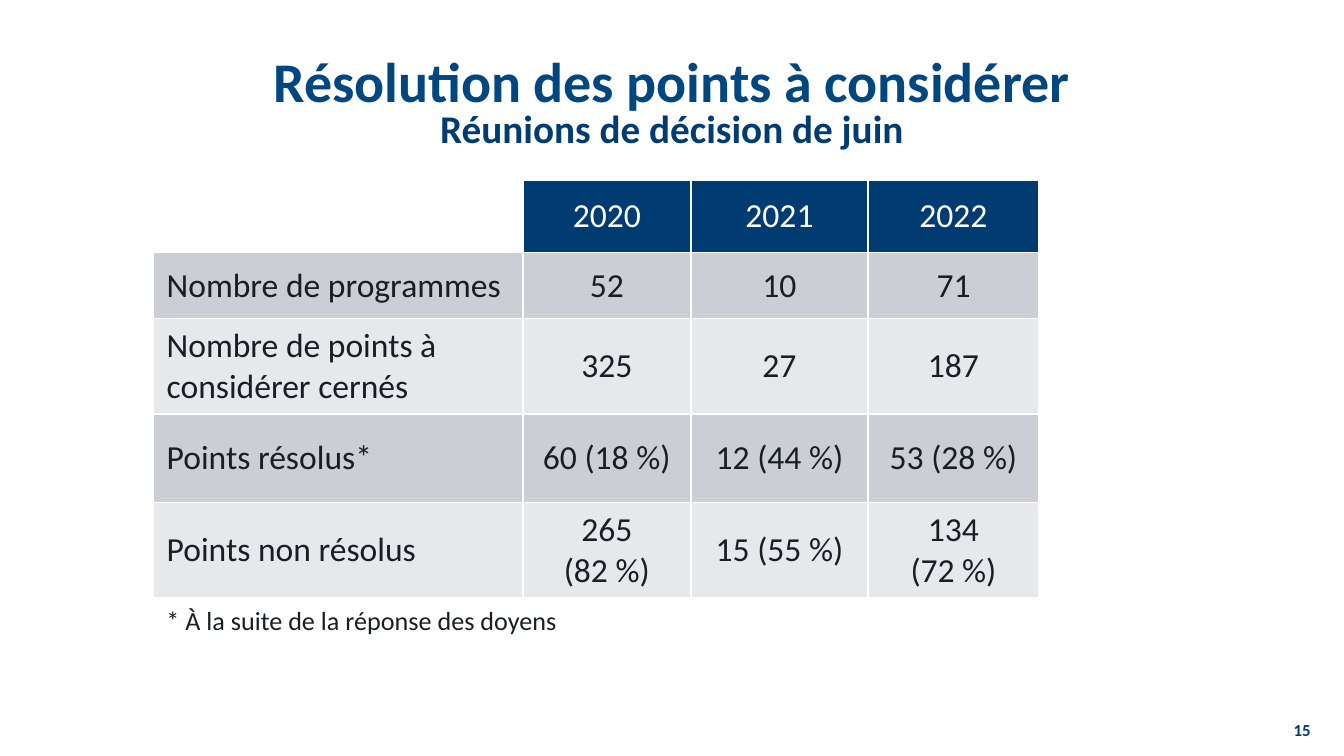
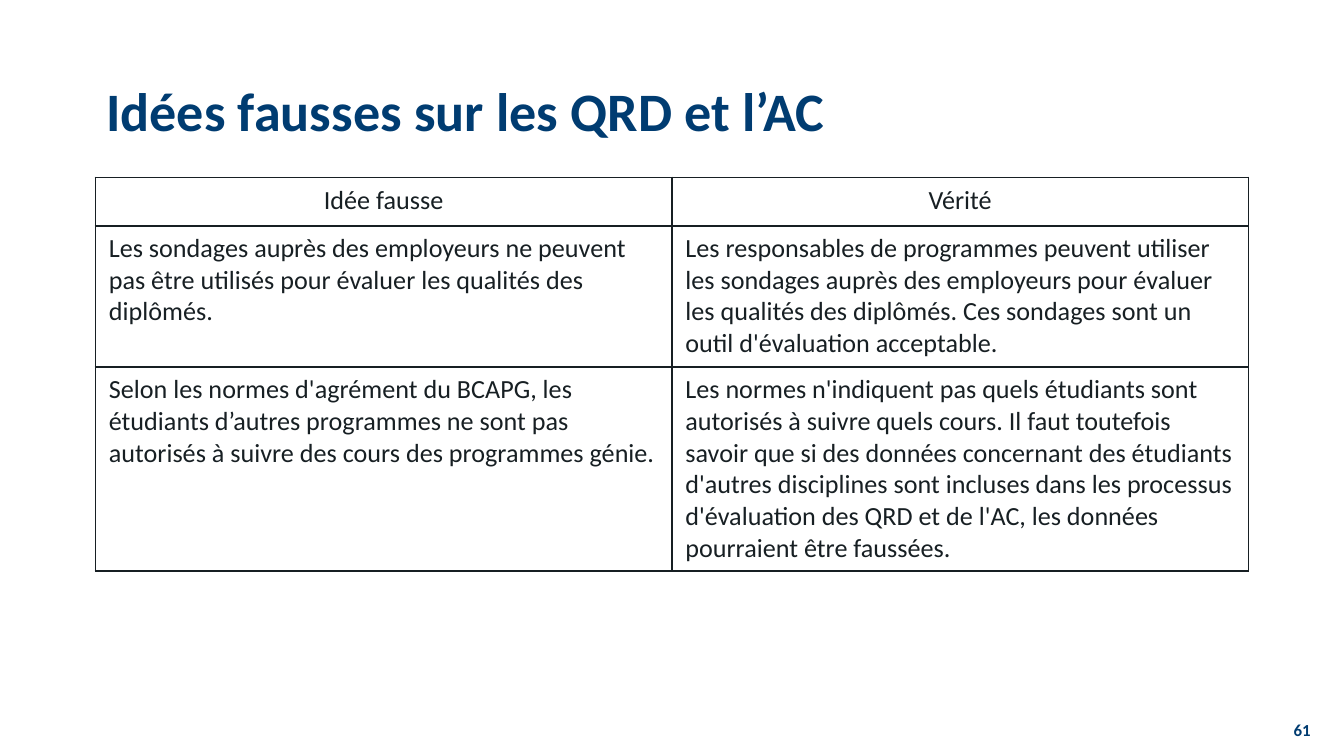
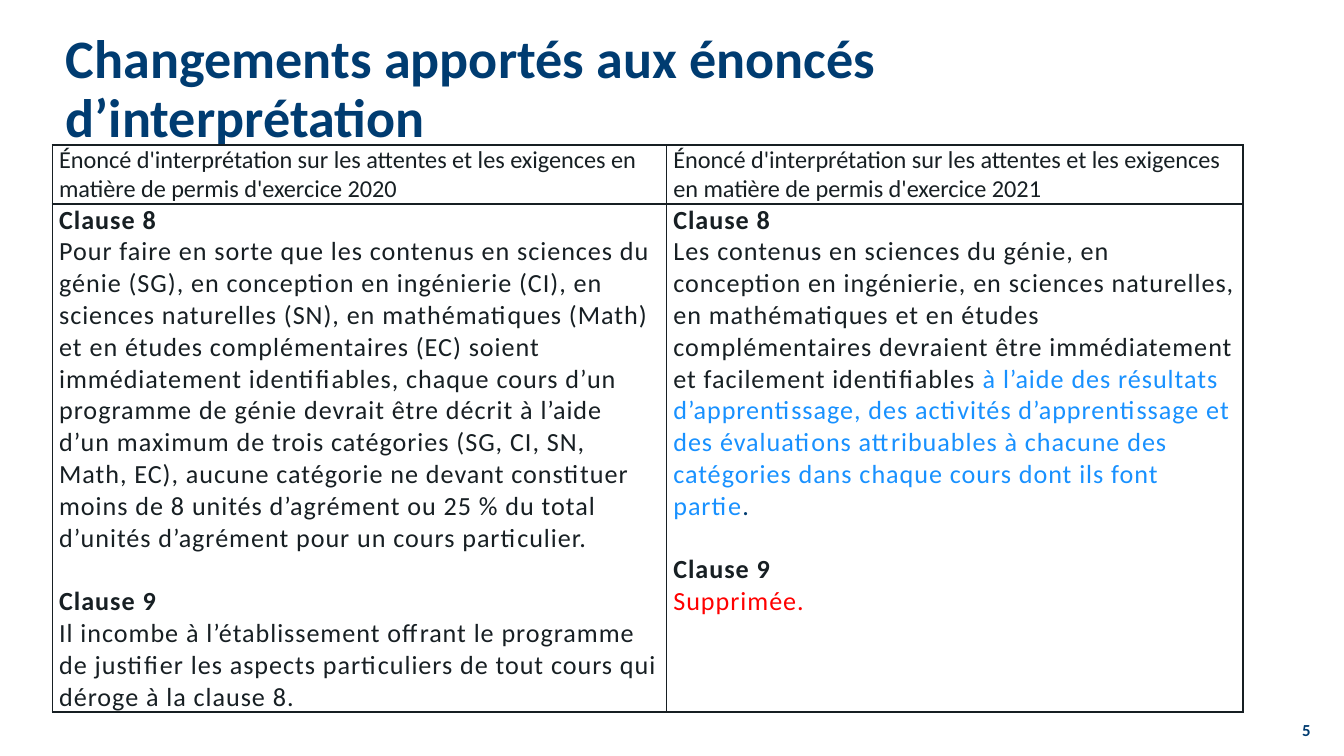
from lxml import etree
from pptx import Presentation
from pptx.dml.color import RGBColor
from pptx.enum.text import MSO_ANCHOR, MSO_AUTO_SIZE, PP_ALIGN
from pptx.oxml.ns import qn
from pptx.util import Inches, Pt

LEFT, MID, RIGHT = PP_ALIGN.LEFT, PP_ALIGN.CENTER, PP_ALIGN.RIGHT
TOP, CENTRE = MSO_ANCHOR.TOP, MSO_ANCHOR.MIDDLE
FIXED = MSO_AUTO_SIZE.NONE

# Shared style
FONT = "Calibri"
NAVY, BLUE, INK, WHITE = "003C71", "00467F", "171F23", "FFFFFF"
DARK, PALE, SKY, RED = "CCCED5", "E7E8EB", "1891FF", "FF0000"
NBSP = chr(160)
TITLE_ONLY = 5


def hue(code):
    return RGBColor.from_string(code)


def cells(count):
    """Length of a number of grid cells; the slide is 100 cells wide."""
    return Inches(count / 10)


def share(count, rate):
    return f"{count} ({rate}{NBSP}%)"


class Deck:
    def __init__(self):
        self.prs = Presentation()
        self.prs.slide_width, self.prs.slide_height = cells(100), cells(56.25)
        self.slide = None

    def page(self, number):
        layout = self.prs.slide_layouts[TITLE_ONLY]
        self.slide = self.prs.slides.add_slide(layout)
        self.label((94.9, 53.5, 3.6, 1.6), str(number), 9, NAVY,
                   bold=True, align=RIGHT, anchor=CENTRE)

    def run(self, para, text, size, color=INK, bold=False, spread=0):
        run = para.add_run()
        run.text = text
        font = run.font
        font.name, font.size, font.bold = FONT, Pt(size), bold
        font.color.rgb = hue(color)
        if spread:
            run._r.get_or_add_rPr().set("spc", str(spread))

    def title(self, box, *lines, align=LEFT, pitch=0.9):
        """Each line is (text, size, colour)."""
        shape = self.slide.shapes.title
        shape.left, shape.top, shape.width, shape.height = map(cells, box)
        frame = shape.text_frame
        frame.auto_size, frame.word_wrap = FIXED, True
        frame.vertical_anchor = CENTRE
        for i, (text, size, color) in enumerate(lines):
            para = frame.add_paragraph() if i else frame.paragraphs[0]
            para.alignment, para.line_spacing = align, pitch
            para.space_before = Pt(0)
            self.run(para, text, size, color, bold=True)

    def label(self, box, text, size, color=INK, bold=False, align=LEFT,
              anchor=TOP):
        frame = self.slide.shapes.add_textbox(*map(cells, box)).text_frame
        frame.word_wrap, frame.vertical_anchor = True, anchor
        frame.paragraphs[0].alignment = align
        self.run(frame.paragraphs[0], text, size, color, bold)

    def grid(self, spot, cols, rows):
        shape = self.slide.shapes.add_table(
            len(rows), len(cols), *map(cells, (*spot, sum(cols), sum(rows))))
        table = shape.table
        table.first_row = table.horz_banding = False
        for col, width in zip(table.columns, cols):
            col.width = cells(width)
        for row, height in zip(table.rows, rows):
            row.height = cells(height)
        return table

    def cell(self, cell, paras, edge, fill=None, align=LEFT, anchor=TOP,
             tight=False):
        """Each paragraph is (space before, runs); a run is run()'s arguments."""
        cell.vertical_anchor = anchor
        if tight:
            cell.margin_left = cell.margin_right = cells(0.5)
            cell.margin_top = cell.margin_bottom = 0
        for i, (gap, runs) in enumerate(paras):
            frame = cell.text_frame
            para = frame.add_paragraph() if i else frame.paragraphs[0]
            para.alignment = align
            if gap:
                para.space_before = Pt(gap)
            for args in runs:
                self.run(para, *args)
        self.edges(cell, edge)
        if fill:
            cell.fill.solid()
            cell.fill.fore_color.rgb = hue(fill)
        else:
            cell.fill.background()

    def edges(self, cell, color):
        props = cell._tc.get_or_add_tcPr()
        for side in "LRTB":
            line = etree.SubElement(props, qn(f"a:ln{side}"), w=str(Pt(1)))
            paint = etree.SubElement(line, qn("a:solidFill"))
            etree.SubElement(paint, qn("a:srgbClr"), val=color)


def points(deck):
    deck.page(15)
    deck.title((7.5, 3.8, 85, 8.1),
               ("Résolution des points à considérer", 30, BLUE),
               ("Réunions de décision de juin", 21, NAVY),
               align=MID, pitch=0.8)
    data = [
        ("", "2020", "2021", "2022"),
        ("Nombre de programmes", "52", "10", "71"),
        ("Nombre de points à considérer cernés", "325", "27", "187"),
        ("Points résolus*", share(60, 18), share(12, 44), share(53, 28)),
        ("Points non résolus", share(265, 82), share(15, 55), share(134, 72)),
    ]
    table = deck.grid((11.4, 13.4), (27.5, 12.5, 13.2, 12.7),
                      (5.4, 4.9, 7.1, 6.6, 7.1))
    for r, row in enumerate(data):
        for c, text in enumerate(row):
            if r:
                fill, color = (DARK if r % 2 else PALE), INK
            else:
                fill, color = (NAVY if c else None), WHITE
            paras = [(0, [(text, 18, color)])] if text else []
            deck.cell(table.cell(r, c), paras, WHITE, fill,
                      MID if c else LEFT, CENTRE)
    deck.label((11.4, 44.5, 70.7, 3.3),
               "* À la suite de la réponse des doyens", 14)


def myths(deck):
    deck.page(61)
    deck.title((6.9, 3, 86.2, 10.9),
               ("Idées fausses sur les QRD et l’AC", 29, NAVY))
    data = [
        ("Idée fausse", "Vérité"),
        ("Les sondages auprès des employeurs ne peuvent pas être utilisés "
         "pour évaluer les qualités des diplômés.",
         "Les responsables de programmes peuvent utiliser les sondages auprès "
         "des employeurs pour évaluer les qualités des diplômés. Ces sondages "
         "sont un outil d'évaluation acceptable."),
        ("Selon les normes d'agrément du BCAPG, les étudiants d’autres "
         "programmes ne sont pas autorisés à suivre des cours des programmes "
         "génie.",
         "Les normes n'indiquent pas quels étudiants sont autorisés à suivre "
         "quels cours. Il faut toutefois savoir que si des données concernant "
         "des étudiants d'autres disciplines sont incluses dans les processus "
         "d'évaluation des QRD et de l'AC, les données pourraient être "
         "faussées."),
    ]
    table = deck.grid((7.1, 13.2), (42.9, 42.9), (3.6, 10.5, 15.2))
    for r, row in enumerate(data):
        for c, text in enumerate(row):
            deck.cell(table.cell(r, c), [(0, [(text, 14)])], INK,
                      align=LEFT if r else MID)


def clauses(deck):
    deck.page(5)
    deck.title((3.9, 1.3, 86.2, 10.9),
               ("Changements apportés aux énoncés d’interprétation", 29, NAVY))
    table = deck.grid((3.9, 10.8), (45.7, 42.9), (4.4, 37.8))

    def text(words, color=INK, bold=False):
        return words, 14, color, bold, 50

    def head(number, gap=0):
        return gap, [text(f"Clause {number}", bold=True)]

    line = 17  # height of one line of body text, in points
    old = [
        head(8),
        (0, [text(
            "Pour faire en sorte que les contenus en sciences du génie (SG), "
            "en conception en ingénierie (CI), en sciences naturelles (SN), "
            "en mathématiques (Math) et en études complémentaires (EC) soient "
            "immédiatement identifiables, chaque cours d’un programme de "
            "génie devrait être décrit à l’aide d’un maximum de trois "
            "catégories (SG, CI, SN, Math, EC), aucune catégorie ne devant "
            "constituer moins de 8 unités d’agrément ou 25 % du total "
            "d’unités d’agrément pour un cours particulier.")]),
        head(9, line),
        (0, [text(
            "Il incombe à l’établissement offrant le programme de justifier "
            "les aspects particuliers de tout cours qui déroge à la "
            "clause 8.")]),
    ]
    new = [
        head(8),
        (0, [text(
            "Les contenus en sciences du génie, en conception en ingénierie, "
            "en sciences naturelles, en mathématiques et en études "
            "complémentaires devraient être immédiatement et facilement "
            "identifiables "),
            text("à l’aide des résultats d’apprentissage, des activités "
                 "d’apprentissage et des évaluations attribuables à chacune "
                 "des catégories dans chaque cours dont ils font partie", SKY),
            text(".", NAVY)]),
        head(9, line),
        (0, [text("Supprimée.", RED)]),
    ]
    for c, (year, body) in enumerate(((2020, old), (2021, new))):
        name = ("Énoncé d'interprétation sur les attentes et les exigences "
                f"en matière de permis d'exercice {year}")
        deck.cell(table.cell(0, c), [(0, [(name, 13)])], INK,
                  anchor=CENTRE, tight=True)
        deck.cell(table.cell(1, c), body, INK, tight=True)


def main():
    deck = Deck()
    points(deck)
    myths(deck)
    clauses(deck)
    deck.prs.save("out.pptx")


if __name__ == "__main__":
    main()
